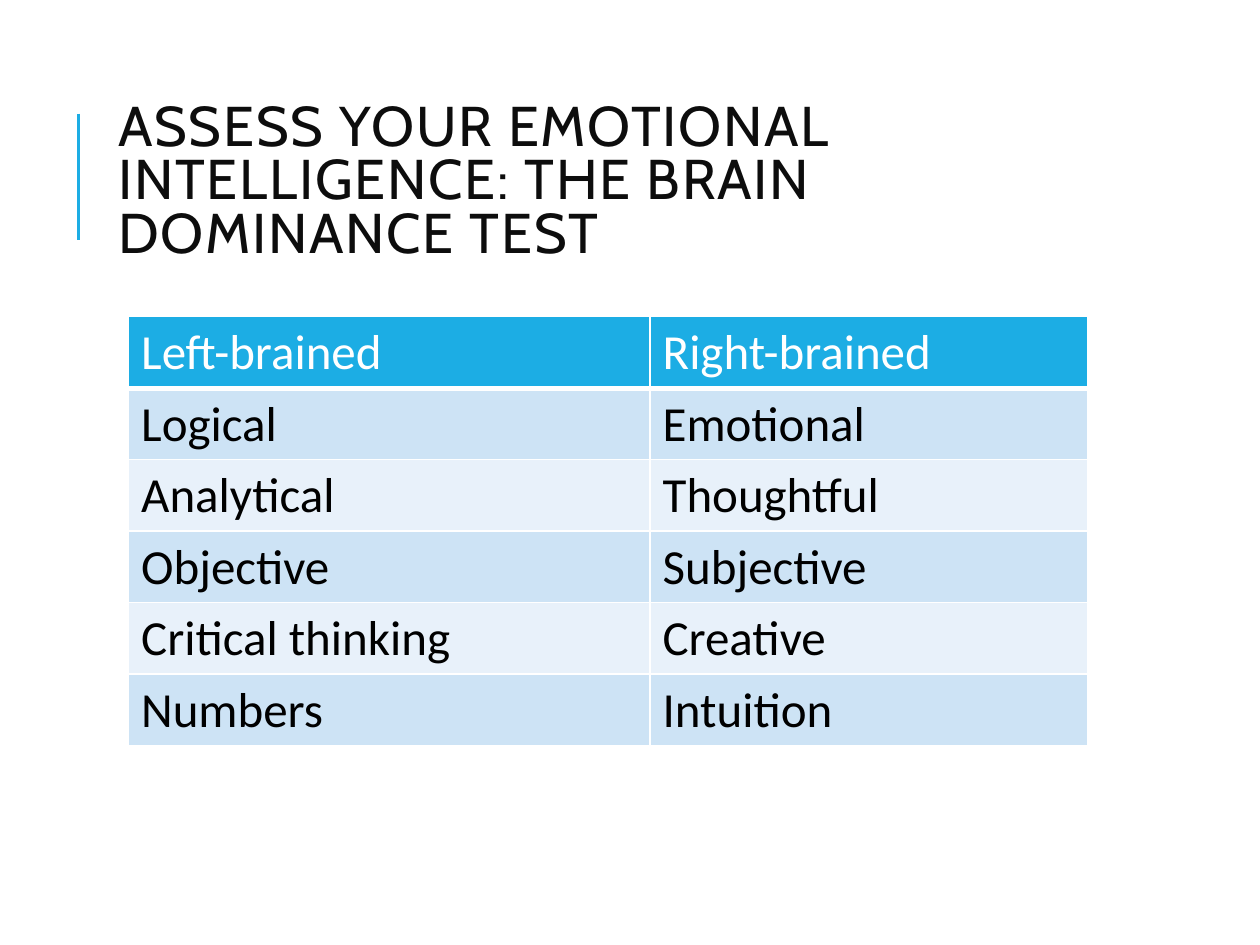
from lxml.etree import SubElement
from pptx import Presentation
from pptx.dml.color import RGBColor
from pptx.enum.shapes import MSO_CONNECTOR
from pptx.enum.text import MSO_ANCHOR
from pptx.oxml.ns import qn
from pptx.util import Pt


def color(value):
    """Turn a hex string into a colour."""
    return RGBColor.from_string(value)


class Slide:
    """Hold the style and the current slide, and draw its elements."""

    ACCENT = "1CADE4"
    WHITE = "FFFFFF"
    BANDS = ("CDE3F5", "E8F1FA")

    def __init__(self, deck):
        self.page = deck.slides.add_slide(deck.slide_layouts[6])

    def span(self, para, text, font, size, ink):
        """Add one styled run to a paragraph."""
        span = para.add_run()
        span.text = text
        span.font.name = font
        span.font.size = Pt(size)
        span.font.color.rgb = color(ink)
        return span

    def line(self, x, top, bottom):
        """Draw a vertical accent line."""
        line = self.page.shapes.add_connector(
            MSO_CONNECTOR.STRAIGHT, Pt(x), Pt(top), Pt(x), Pt(bottom))
        line.line.color.rgb = color(self.ACCENT)
        line.line.width = Pt(1.5)
        SubElement(line._element.spPr, qn("a:effectLst"))

    def title(self, text, left, top, width, height):
        """Add the letter-spaced title."""
        box = self.page.shapes.add_textbox(Pt(left), Pt(top), Pt(width), Pt(height))
        frame = box.text_frame
        frame.word_wrap = True
        frame.vertical_anchor = MSO_ANCHOR.MIDDLE
        para = frame.paragraphs[0]
        para.line_spacing = 0.8
        span = self.span(para, text, "Cabin", 32, "0D0D0D")
        span.font._element.set("spc", "100")

    def borders(self, cell, bottom):
        """Give a cell white borders with the chosen bottom width."""
        properties = cell._tc.get_or_add_tcPr()
        for side, width in (("L", 1), ("R", 1), ("T", 1), ("B", bottom)):
            edge = SubElement(properties, qn(f"a:ln{side}"), w=str(Pt(width)))
            fill = SubElement(edge, qn("a:solidFill"))
            SubElement(fill, qn("a:srgbClr"), val=self.WHITE)

    def table(self, rows, left, top, widths, row_height):
        """Add a table with a header row and banded body rows."""
        table = self.page.shapes.add_table(
            len(rows), len(widths), Pt(left), Pt(top),
            Pt(sum(widths)), Pt(row_height * len(rows))).table
        for column, width in zip(table.columns, widths):
            column.width = Pt(width)
        for r, row in enumerate(rows):
            header = r == 0
            fill = self.ACCENT if header else self.BANDS[(r - 1) % 2]
            ink = self.WHITE if header else "000000"
            for c, text in enumerate(row):
                cell = table.cell(r, c)
                self.borders(cell, 3 if header else 1)
                cell.fill.solid()
                cell.fill.fore_color.rgb = color(fill)
                span = self.span(cell.text_frame.paragraphs[0], text, "Calibri", 28, ink)
                span.font.bold = False


def main():
    """Build and save the deck."""
    deck = Presentation()
    deck.slide_width, deck.slide_height = Pt(720), Pt(540)
    slide = Slide(deck)
    slide.line(44.8, 65, 137)
    slide.title("ASSESS YOUR EMOTIONAL INTELLIGENCE: THE BRAIN DOMINANCE TEST",
                60.5, 46, 574, 118)
    slide.table([
        ("Left-brained", "Right-brained"),
        ("Logical", "Emotional"),
        ("Analytical", "Thoughtful"),
        ("Objective", "Subjective"),
        ("Critical thinking", "Creative"),
        ("Numbers", "Intuition"),
    ], 73.5, 181, (298, 250), 40.8)
    deck.save("out.pptx")


if __name__ == "__main__":
    main()
